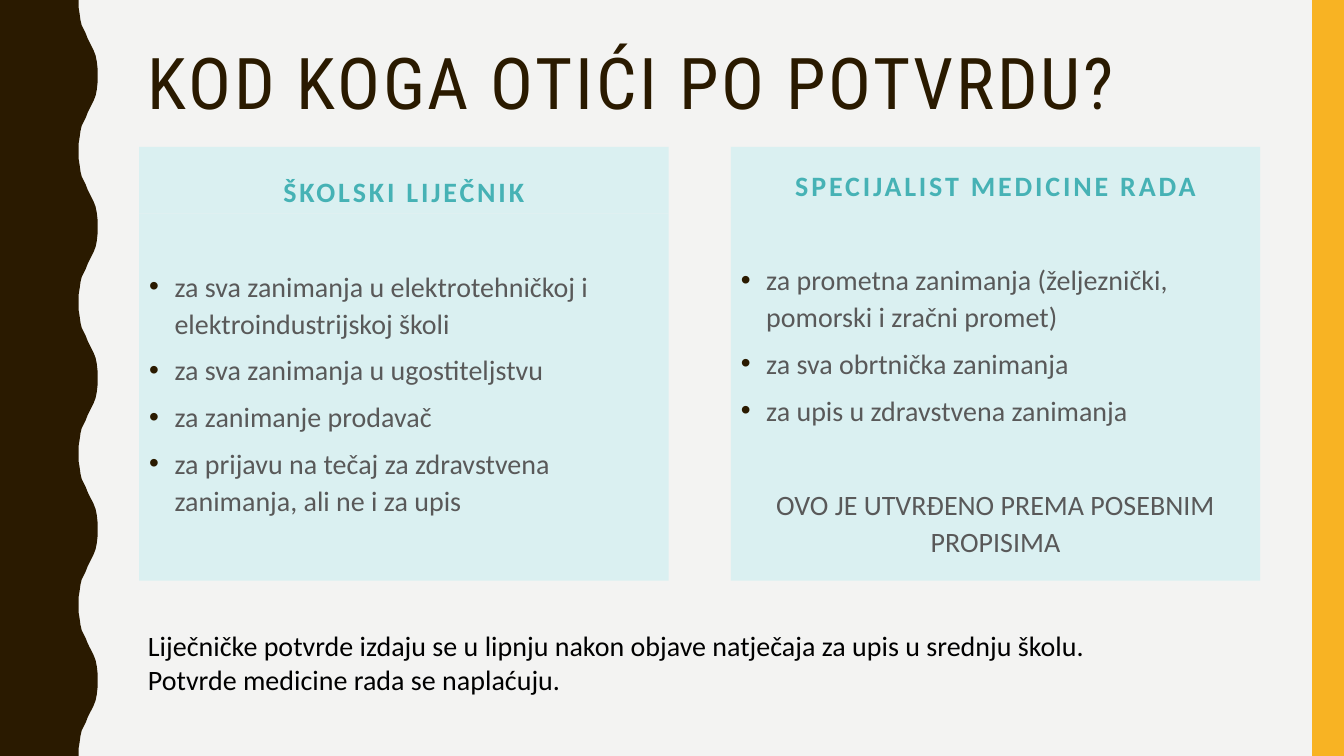
from lxml import etree
from pptx import Presentation
from pptx import util as u
from pptx.dml.color import RGBColor
from pptx.enum import shapes, text
from pptx.oxml import ns

Cm, Pt = u.Cm, u.Pt
COLORS = {
    "background": "F3F3F2", "brown": "2A1A00", "yellow": "F8B323", "panel": "DAF0F1",
    "heading": "46B2B5", "body": "595959", "black": "000000",
}
SLIDE_W, SLIDE_H = 33.87, 19.05
WAVE_PERIOD = 3.81
# Half a wave, from trough to crest: (x, y) in cm
HALF_WAVE = [
    (1.98, 0), (1.98, 0.18), (2.01, 0.36), (2.03, 0.51), (2.06, 0.64),
    (2.11, 0.74), (2.16, 0.84), (2.21, 0.97), (2.26, 1.07), (2.31, 1.17),
    (2.36, 1.27), (2.41, 1.4), (2.44, 1.55), (2.46, 1.73), (2.46, 1.9),
]
PANELS = [
    dict(left=3.51, heading_height=1.68, heading="ŠKOLSKI LIJEČNIK",
         items=["za sva zanimanja u elektrotehničkoj i elektroindustrijskoj školi",
                "za sva zanimanja u ugostiteljstvu",
                "za zanimanje prodavač",
                "za prijavu na tečaj za zdravstvena zanimanja, ali ne i za upis"]),
    dict(left=18.42, heading_height=1.52, heading="SPECIJALIST MEDICINE RADA",
         items=["za prometna zanimanja (željeznički, pomorski i zračni promet)",
                "za sva obrtnička zanimanja",
                "za upis u zdravstvena zanimanja"],
         remark="OVO JE UTVRĐENO PREMA POSEBNIM PROPISIMA"),
]


def color(name):
    return RGBColor.from_string(COLORS[name])


def paint(shape, fill):
    shape.shadow.inherit = False
    shape.fill.solid()
    shape.fill.fore_color.rgb = color(fill)
    shape.line.fill.background()


def add_block(slide, left, top, width, height, fill):
    block = slide.shapes.add_shape(
        shapes.MSO_SHAPE.RECTANGLE, Cm(left), Cm(top), Cm(width), Cm(height))
    paint(block, fill)
    return block


def style(paragraph, size, ink, font="Calibri", bold=False, spacing=0):
    for run in paragraph.runs:
        run.font.name = font
        run.font.size = Pt(size)
        run.font.bold = bold
        run.font.color.rgb = color(ink)
        if spacing:
            run.font._element.set("spc", str(spacing * 100))


def add_bullet(paragraph):
    props = paragraph._p.get_or_add_pPr()
    props.set("marL", str(Cm(0.64)))
    props.set("indent", str(-Cm(0.64)))
    bullet_color = etree.SubElement(props, ns.qn("a:buClr"))
    etree.SubElement(bullet_color, ns.qn("a:srgbClr"), val=COLORS["brown"])
    etree.SubElement(props, ns.qn("a:buFont"), typeface="Arial")
    etree.SubElement(props, ns.qn("a:buChar"), char="•")


def add_wavy_edge(slide, height):
    crest_to_trough = [(x, WAVE_PERIOD - y) for x, y in reversed(HALF_WAVE)]
    wave = HALF_WAVE + crest_to_trough
    edge = [(x, y + n * WAVE_PERIOD)
            for n in range(round(height / WAVE_PERIOD)) for x, y in wave]
    builder = slide.shapes.build_freeform(0, 0)
    builder.add_line_segments([(Cm(x), Cm(y)) for x, y in edge + [(0, height)]])
    paint(builder.convert_to_shape(), "brown")


def add_text(slide, left, top, width, height, words):
    box = slide.shapes.add_textbox(Cm(left), Cm(top), Cm(width), Cm(height))
    box.text_frame.word_wrap = True
    box.text_frame.text = words
    return box.text_frame


def add_title(slide, left, top, width, height):
    frame = add_text(slide, left, top, width, height, "KOD KOGA OTIĆI PO POTVRDU?")
    frame.paragraphs[0].line_spacing = 0.9
    style(frame.paragraphs[0], 51, "brown", "Roboto Condensed", spacing=2)


def add_panel(slide, left, top, width, height, heading_height, heading, items, remark=None):
    # Heading
    head = add_block(slide, left, top, width, heading_height, "panel").text_frame
    head.word_wrap = True
    head.vertical_anchor = text.MSO_ANCHOR.BOTTOM
    head.text = heading
    head.paragraphs[0].alignment = text.PP_ALIGN.CENTER
    style(head.paragraphs[0], 20, "heading", bold=True, spacing=2)

    # Bulleted items and closing remark
    body = add_block(slide, left, top + heading_height, width,
                     height - heading_height, "panel").text_frame
    body.word_wrap = True
    body.vertical_anchor = text.MSO_ANCHOR.TOP
    body.margin_top = Cm(1.32)
    body.text = "\n".join(items + ([remark] if remark else []))
    for index, paragraph in enumerate(body.paragraphs):
        paragraph.line_spacing = 1.1
        is_item = index < len(items)
        paragraph.alignment = text.PP_ALIGN.LEFT if is_item else text.PP_ALIGN.CENTER
        paragraph.space_before = Pt((7 if index else 0) if is_item else 41)
        style(paragraph, 20, "body")
        if is_item:
            add_bullet(paragraph)


def add_footnote(slide, left, top, width, height):
    frame = add_text(
        slide, left, top, width, height,
        "Liječničke potvrde izdaju se u lipnju nakon objave natječaja za upis u srednju školu.\n"
        "Potvrde medicine rada se naplaćuju.")
    frame.auto_size = text.MSO_AUTO_SIZE.SHAPE_TO_FIT_TEXT
    for paragraph in frame.paragraphs:
        style(paragraph, 20, "black")


def main():
    deck = Presentation()
    deck.slide_width, deck.slide_height = Cm(SLIDE_W), Cm(SLIDE_H)
    slide = deck.slides.add_slide(deck.slide_layouts[6])
    slide.background.fill.solid()
    slide.background.fill.fore_color.rgb = color("background")

    # Side decoration
    add_wavy_edge(slide, SLIDE_H)
    add_block(slide, SLIDE_W - 0.8, 0, 0.8, SLIDE_H, "yellow")

    # Content
    add_title(slide, 3.48, 1.07, 28.24, 4.14)
    for panel in PANELS:
        add_panel(slide, top=3.7, width=13.34, height=10.93, **panel)
    add_footnote(slide, 3.48, 15.72, 28.24, 1.96)
    deck.save("out.pptx")


if __name__ == "__main__":
    main()
